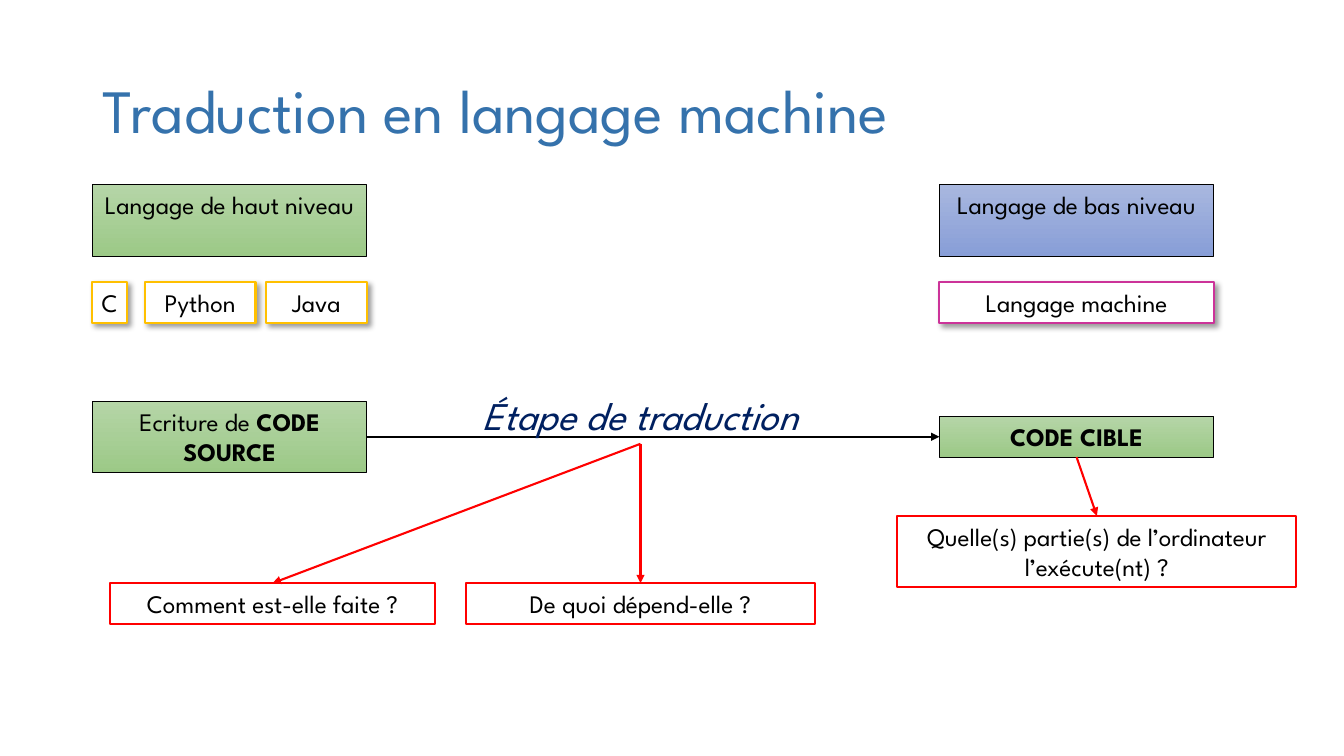
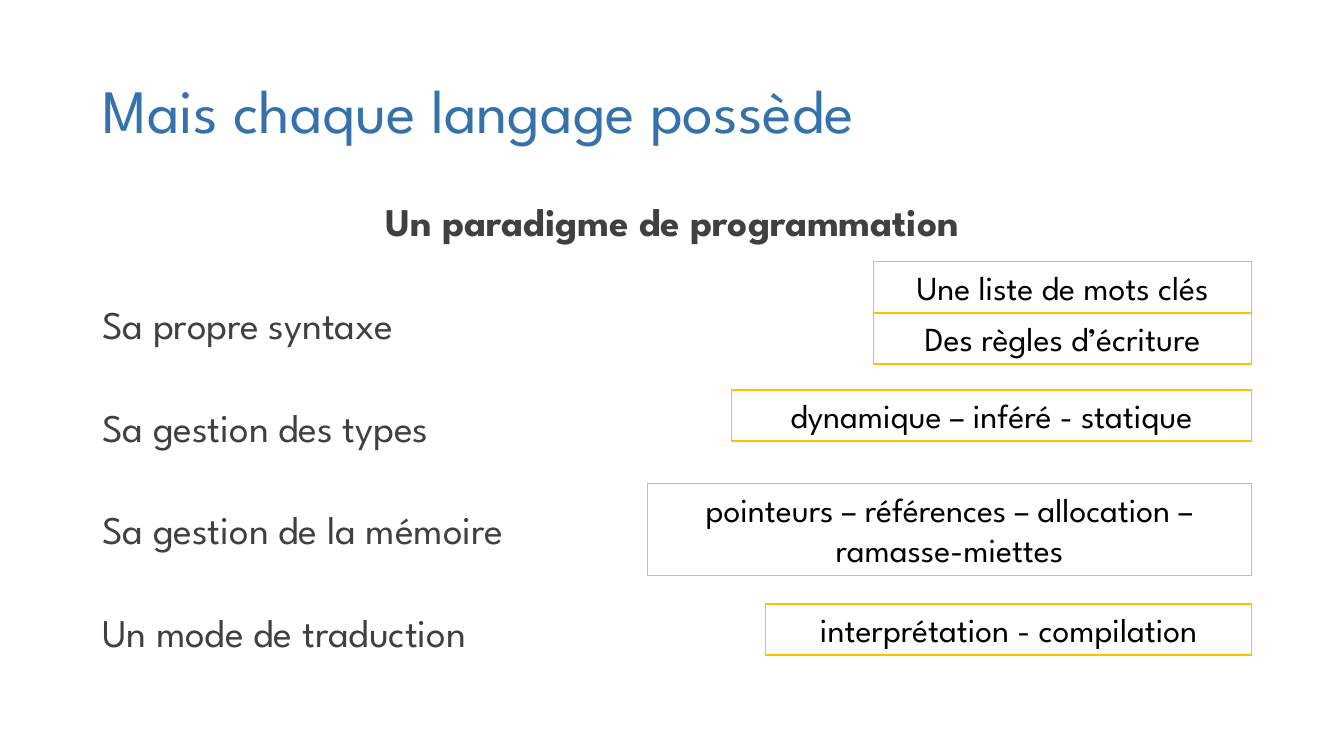
from dataclasses import dataclass

from lxml import etree
from pptx import Presentation
from pptx import util as u
from pptx.dml import color
from pptx.enum import shapes, text
from pptx.oxml import ns
from pptx.shapes import autoshape
from pptx.slide import Slide
from pptx.text import text as tx


@dataclass(frozen=True)
class Theme:
    font: str = "League Spartan"
    title: str = "3572AC"
    body: str = "404040"
    step: str = "002060"
    ink: str = "000000"
    paper: str = "FFFFFF"
    gold: str = "FFC000"
    pink: str = "CC3399"
    red: str = "FF0000"
    green: tuple[str, str] = ("B5D5A7", "9CC987")
    blue: tuple[str, str] = ("A8B7DF", "889ED7")
    head: float = 44
    large: float = 28
    mid: float = 24
    small: float = 18


T = Theme()
WIDE, HIGH = 960, 540
LEFT, SPAN = 66, 828
RIGHT = LEFT + SPAN
COL, FAR = 196, 671  # column width and start of the right column
ONE, TWO = 29, 51  # box heights for one and two lines of small text


@dataclass(frozen=True)
class Run:
    text: str
    bold: bool = False
    italic: bool = False


@dataclass(frozen=True)
class Box:
    x: float
    y: float
    w: float
    h: float
    runs: tuple[Run, ...]
    fill: tuple[str, ...] = (T.paper,)
    edge: str = T.ink
    line: float = 1.5
    size: float = T.small
    shadow: bool = False
    wrap: bool = True


def rgb(code: str) -> color.RGBColor:
    return color.RGBColor.from_string(code)


def write(par: tx._Paragraph, runs: tuple[Run, ...], size: float, ink: str) -> None:
    for item in runs:
        run = par.add_run()
        run.text = item.text
        font = run.font
        font.name, font.size = T.font, u.Pt(size)
        font.bold, font.italic = item.bold, item.italic
        font.color.rgb = rgb(ink)


def start(deck: Presentation, title: str) -> Slide:
    """Add a title-only slide and set its title."""
    slide = deck.slides.add_slide(deck.slide_layouts[5])
    head = slide.shapes.title
    head.left, head.top = u.Pt(LEFT), u.Pt(29)
    head.width, head.height = u.Pt(SPAN), u.Pt(104)
    frame = head.text_frame
    frame.vertical_anchor = text.MSO_ANCHOR.MIDDLE
    frame.auto_size = text.MSO_AUTO_SIZE.NONE
    par = frame.paragraphs[0]
    par.alignment, par.line_spacing = text.PP_ALIGN.LEFT, 0.9
    write(par, (Run(title),), T.head, T.title)
    return slide


def cast(shape: autoshape.Shape) -> None:
    """Give the shape a soft shadow to the lower right."""
    effects = shape.element.spPr.find(ns.qn("a:effectLst"))
    outer = etree.SubElement(
        effects, ns.qn("a:outerShdw"), blurRad=str(u.Pt(4)), dist=str(u.Pt(3)),
        dir="2700000", algn="tl", rotWithShape="0")
    tint = etree.SubElement(outer, ns.qn("a:srgbClr"), val=T.ink)
    etree.SubElement(tint, ns.qn("a:alpha"), val="40000")


def draw(slide: Slide, box: Box) -> autoshape.Shape:
    shape = slide.shapes.add_shape(
        shapes.MSO_SHAPE.RECTANGLE,
        u.Pt(box.x), u.Pt(box.y), u.Pt(box.w), u.Pt(box.h))
    shape.shadow.inherit = False
    if box.shadow:
        cast(shape)
    if len(box.fill) == 1:
        shape.fill.solid()
        shape.fill.fore_color.rgb = rgb(box.fill[0])
    else:
        shape.fill.gradient()
        shape.fill.gradient_angle = 270
        for stop, code in zip(shape.fill.gradient_stops, box.fill):
            stop.color.rgb = rgb(code)
    shape.line.color.rgb = rgb(box.edge)
    shape.line.width = u.Pt(box.line)
    frame = shape.text_frame
    frame.word_wrap = box.wrap
    frame.vertical_anchor = text.MSO_ANCHOR.TOP
    par = frame.paragraphs[0]
    par.alignment = text.PP_ALIGN.CENTER
    write(par, box.runs, box.size, T.ink)
    return shape


def label(slide: Slide, x: float, y: float, w: float, h: float) -> autoshape.Shape:
    shape = slide.shapes.add_textbox(u.Pt(x), u.Pt(y), u.Pt(w), u.Pt(h))
    shape.text_frame.word_wrap = True
    return shape


def link(slide: Slide, tail: autoshape.Shape, out: int,
         tip: autoshape.Shape, into: int, ink: str) -> None:
    """Draw an arrow between two numbered sides."""
    arrow = slide.shapes.add_connector(shapes.MSO_CONNECTOR.STRAIGHT, 0, 0, 0, 0)
    arrow.begin_connect(tail, out)
    arrow.end_connect(tip, into)
    arrow.line.color.rgb = rgb(ink)
    arrow.line.width = u.Pt(1.5)
    props = arrow.element.spPr
    etree.SubElement(props.find(ns.qn("a:ln")), ns.qn("a:tailEnd"), type="triangle")
    etree.SubElement(props, ns.qn("a:effectLst"))


def flow(deck: Presentation) -> None:
    slide = start(deck, "Traduction en langage machine")

    for x, name, fill in ((LEFT, "Langage de haut niveau", T.green),
                          (FAR, "Langage de bas niveau", T.blue)):
        draw(slide, Box(x, 132, COL, TWO, (Run(name),), fill, line=0.5))

    for x, w, name, edge in ((LEFT, 24.5, "C", T.gold),
                             (103.5, 79, "Python", T.gold),
                             (190, 72, "Java", T.gold),
                             (FAR, COL, "Langage machine", T.pink)):
        draw(slide, Box(x, 201.5, w, ONE, (Run(name),), edge=edge,
                        shadow=True, wrap=len(name) > 1))

    axis = 312
    source, target = (
        draw(slide, Box(x, axis - h / 2, COL, h, runs, T.green, line=0.5))
        for x, h, runs in (
            (LEFT, TWO, (Run("Ecriture de "), Run("CODE SOURCE", bold=True))),
            (FAR, ONE, (Run("CODE CIBLE", bold=True),))))
    link(slide, source, 3, target, 1, T.ink)

    step = label(slide, 294.5, 276, 326, 41)
    par = step.text_frame.paragraphs[0]
    par.alignment = text.PP_ALIGN.CENTER
    write(par, (Run("Étape de traduction", italic=True),), T.large, T.step)

    for root, x, y, w, h, ask in (
            (step, 78.5, 416.5, 232.5, ONE, "Comment est-elle faite ?"),
            (step, 333, 416.5, 249, ONE, "De quoi dépend-elle ?"),
            (target, 641, 368.5, 285, TWO,
             "Quelle(s) partie(s) de l’ordinateur l’exécute(nt) ?")):
        query = draw(slide, Box(x, y, w, h, (Run(ask),), edge=T.red))
        link(slide, root, 2, query, 0, T.red)


def traits(deck: Presentation) -> None:
    slide = start(deck, "Mais chaque langage possède")

    frame = label(slide, LEFT, 144, SPAN, 343).text_frame
    lead = frame.paragraphs[0]
    lead.alignment, lead.line_spacing = text.PP_ALIGN.CENTER, 0.8
    write(lead, (Run("Un paradigme de programmation", bold=True),), T.large, T.body)
    for name in ("Sa propre syntaxe", "Sa gestion des types",
                 "Sa gestion de la mémoire", "Un mode de traduction"):
        par = frame.add_paragraph()
        par.line_spacing, par.space_before = 0.8, u.Pt(46.5)
        write(par, (Run(name),), T.large, T.body)

    for y, w, h, name in (
            (187, 270, 36.5, "Une liste de mots clés"),
            (223.5, 270, 36.5, "Des règles d’écriture"),
            (278.5, 371.5, 36.5, "dynamique – inféré - statique"),
            (345.5, 431.5, 65.5, "pointeurs – références – allocation – ramasse-miettes"),
            (431.5, 347, 36.5, "interprétation - compilation")):
        draw(slide, Box(RIGHT - w, y, w, h, (Run(name),), edge=T.gold,
                        line=1, size=T.mid))


def main() -> None:
    deck = Presentation()
    deck.slide_width, deck.slide_height = u.Pt(WIDE), u.Pt(HIGH)
    flow(deck)
    traits(deck)
    deck.save("out.pptx")


if __name__ == "__main__":
    main()
